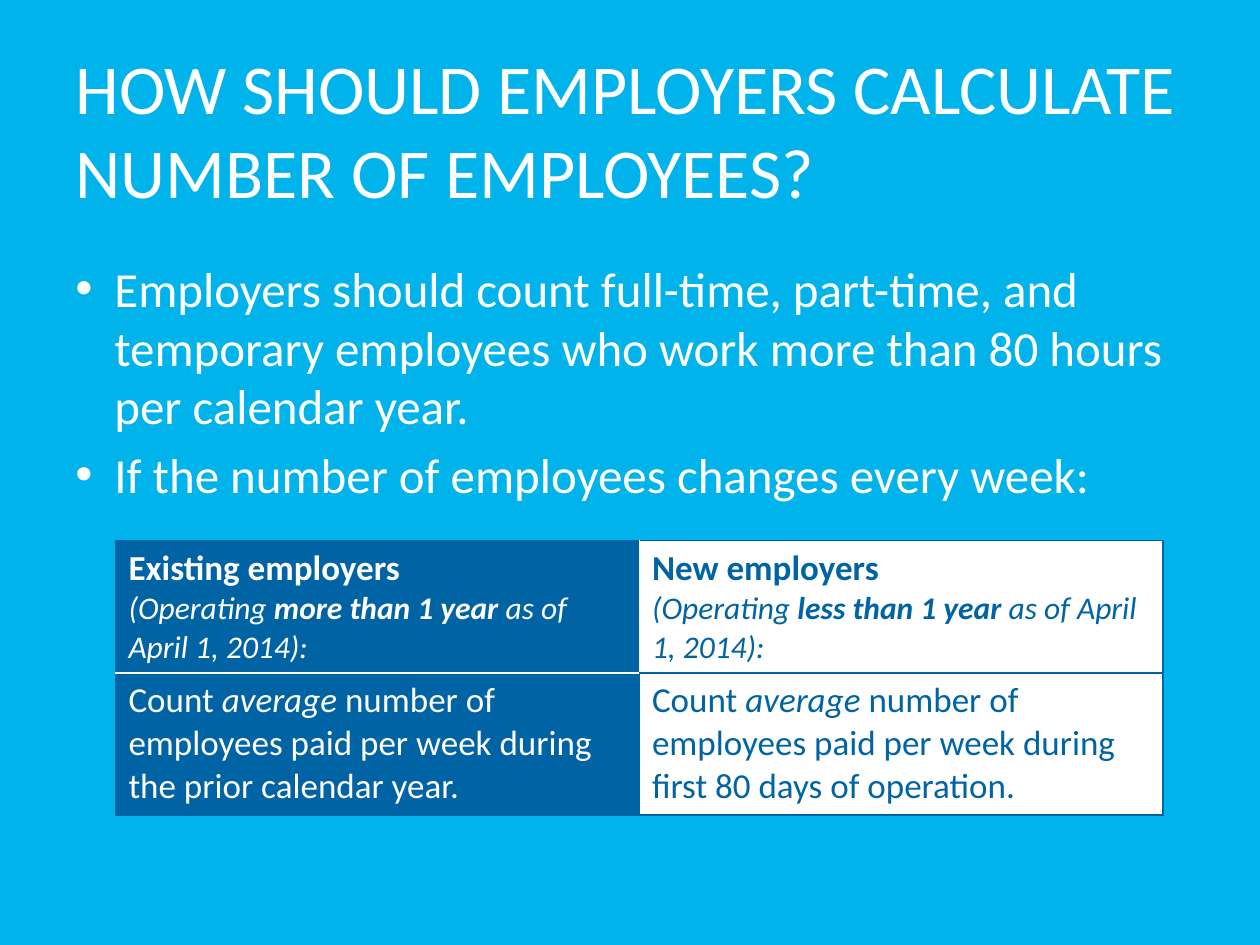
from lxml.etree import SubElement
from pptx import Presentation
from pptx.dml.color import RGBColor
from pptx.enum.text import MSO_ANCHOR, PP_ALIGN
from pptx.oxml.ns import qn
from pptx.util import Inches, Pt

FONT = "Calibri"
SKY, BLUE, WHITE = "00B3EA", "0064A4", "FFFFFF"

TITLE = "HOW SHOULD EMPLOYERS CALCULATE NUMBER OF EMPLOYEES?"
BULLETS = [
    "Employers should count full-time, part-time, and temporary employees "
    "who work more than 80 hours per calendar year.",
    "If the number of employees changes every week:",
]
# One entry per column: heading, operating time, counting period, fill, text colour
EMPLOYERS = [
    ("Existing employers", "more than 1 year", "the prior calendar year.", BLUE, WHITE),
    ("New employers", "less than 1 year", "first 80 days of operation.", WHITE, BLUE),
]
# Border colours (left, top, right, bottom) by row and column
BORDERS = [
    [(BLUE, BLUE, WHITE, WHITE), (WHITE, BLUE, BLUE, BLUE)],
    [(BLUE, WHITE, BLUE, BLUE), (BLUE, BLUE, BLUE, BLUE)],
]
MARGIN, CONTENT_WIDTH = 0.5, 9
TABLE_LEFT, TABLE_TOP, TABLE_WIDTH = 0.92, 4.29, 8.31
ROW_HEIGHTS = (1.05, 1.13)


def color(hex_value):
    return RGBColor.from_string(hex_value)


def style(paragraph, size, hex_value):
    paragraph.alignment = PP_ALIGN.LEFT
    paragraph.font.name = FONT
    paragraph.font.size = Pt(size)
    paragraph.font.color.rgb = color(hex_value)


def add_runs(paragraph, runs):
    """Add (text, bold, italic) runs."""
    for text, bold, italic in runs:
        run = paragraph.add_run()
        run.text = text
        run.font.bold, run.font.italic = bold, italic


def add_bullet(paragraph):
    properties = paragraph._p.get_or_add_pPr()
    indent = Inches(0.31)
    properties.set("marL", str(indent))
    properties.set("indent", str(-indent))
    SubElement(properties, qn("a:buFont"), typeface="Arial")
    SubElement(properties, qn("a:buChar"), char="•")


def format_cell(cell, fill, borders):
    properties = cell._tc.get_or_add_tcPr()
    for side, hex_value in zip("LTRB", borders):
        line = SubElement(properties, qn(f"a:ln{side}"), w=str(Pt(1)))
        solid = SubElement(line, qn("a:solidFill"))
        SubElement(solid, qn("a:srgbClr"), val=hex_value)
    cell.fill.solid()
    cell.fill.fore_color.rgb = color(fill)


def add_title(slide):
    title = slide.shapes.title
    title.left, title.top = Inches(MARGIN), Inches(0.3)
    title.width, title.height = Inches(CONTENT_WIDTH), Inches(1.25)
    title.text_frame.text = TITLE
    title.text_frame.vertical_anchor = MSO_ANCHOR.TOP
    style(title.text_frame.paragraphs[0], 40, WHITE)


def add_bullets(slide):
    box = slide.shapes.add_textbox(Inches(MARGIN), Inches(2), Inches(CONTENT_WIDTH), Inches(4.95))
    frame = box.text_frame
    frame.word_wrap = True
    for index, text in enumerate(BULLETS):
        paragraph = frame.add_paragraph() if index else frame.paragraphs[0]
        paragraph.text = text
        paragraph.space_before = Pt(5.6 if index else 0)
        add_bullet(paragraph)
        style(paragraph, 28, WHITE)


def add_employer_table(slide):
    table = slide.shapes.add_table(
        len(ROW_HEIGHTS), len(EMPLOYERS), Inches(TABLE_LEFT), Inches(TABLE_TOP),
        Inches(TABLE_WIDTH), Inches(sum(ROW_HEIGHTS))).table
    table.first_row = table.horz_banding = False
    for row, height in zip(table.rows, ROW_HEIGHTS):
        row.height = Inches(height)
    for column, (heading, duration, period, fill, ink) in enumerate(EMPLOYERS):
        paragraphs_by_row = [
            [(20, [(heading, True, False)]),
             (18, [("(Operating ", False, True), (duration, True, True),
                   (" as of April 1, 2014):", False, True)])],
            [(20, [("Count ", False, False), ("average", False, True),
                   (f" number of employees paid per week during {period}", False, False)])],
        ]
        for row, paragraphs in enumerate(paragraphs_by_row):
            cell = table.cell(row, column)
            format_cell(cell, fill, BORDERS[row][column])
            frame = cell.text_frame
            for index, (size, runs) in enumerate(paragraphs):
                paragraph = frame.add_paragraph() if index else frame.paragraphs[0]
                add_runs(paragraph, runs)
                style(paragraph, size, ink)


def main():
    presentation = Presentation()
    presentation.slide_width, presentation.slide_height = Inches(10), Inches(7.5)
    slide = presentation.slides.add_slide(presentation.slide_layouts.get_by_name("Title Only"))
    slide.background.fill.solid()
    slide.background.fill.fore_color.rgb = color(SKY)
    add_title(slide)
    add_bullets(slide)
    add_employer_table(slide)
    presentation.save("out.pptx")


if __name__ == "__main__":
    main()
